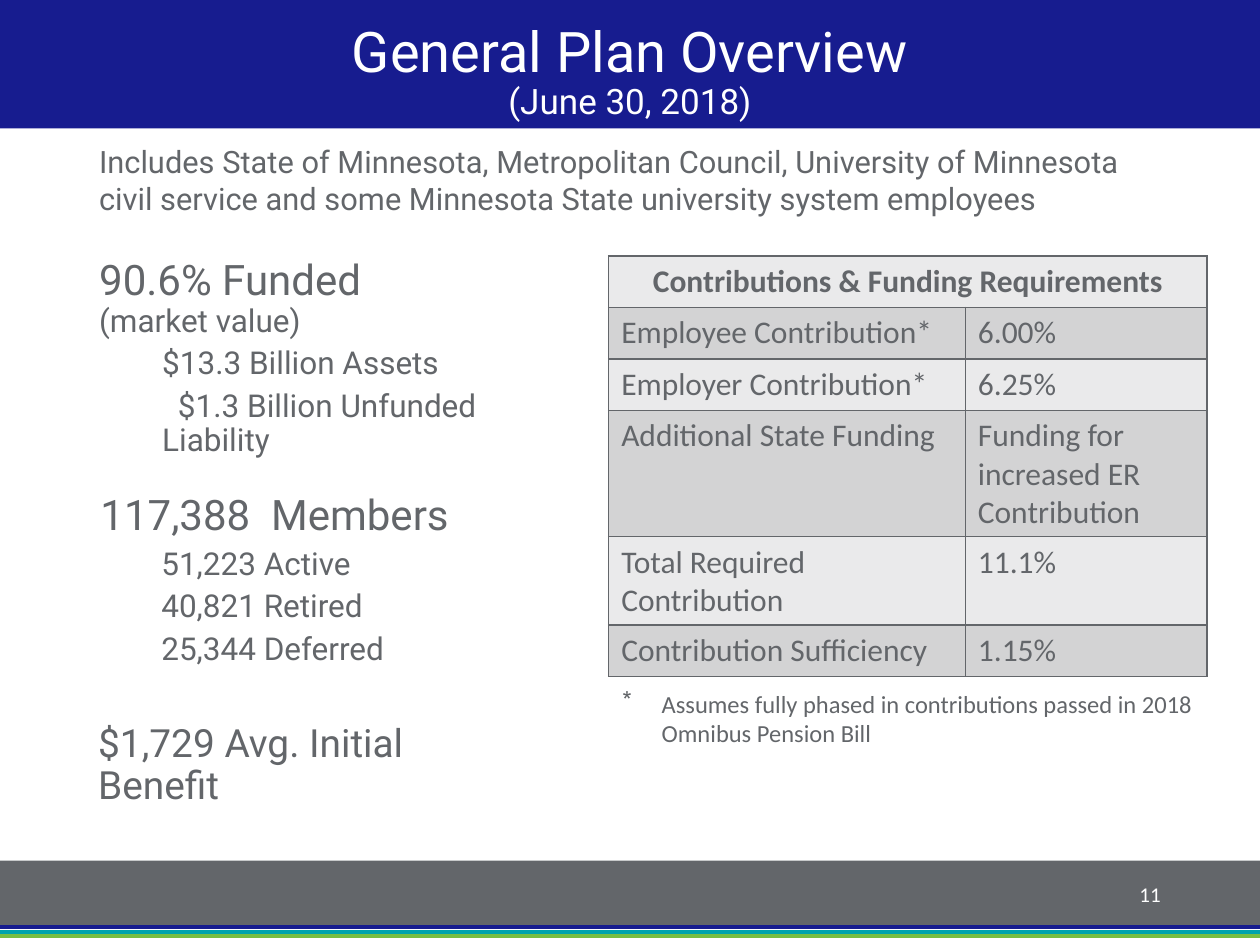
from copy import deepcopy

from lxml.etree import SubElement
from pptx import Presentation
from pptx.dml.color import RGBColor
from pptx.enum.shapes import MSO_CONNECTOR, MSO_SHAPE
from pptx.enum.text import MSO_ANCHOR, MSO_AUTO_SIZE, PP_ALIGN
from pptx.oxml.ns import qn
from pptx.util import Pt

NAVY = RGBColor(0x17, 0x1C, 0x8F)
TEAL = RGBColor(0x00, 0xA3, 0xAD)
GREEN = RGBColor(0x78, 0xBE, 0x43)
GRAY = RGBColor(0x63, 0x66, 0x6A)
LIGHT = RGBColor(0xEA, 0xEA, 0xEB)
MID = RGBColor(0xD3, 0xD3, 0xD4)
WHITE = RGBColor(0xFF, 0xFF, 0xFF)

HEADING = {"size": Pt(24), "name": "Roboto"}
DETAIL = {"size": Pt(18), "name": "Roboto"}
CELL = {"size": Pt(18), "name": "Calibri", "bold": False}


def set_font(font, formats, color=GRAY):
    for attribute, value in formats.items():
        setattr(font, attribute, value)
    font.color.rgb = color


def place(shape, box):
    for attribute, value in zip(("left", "top", "width", "height"), box):
        setattr(shape, attribute, Pt(value))


def set_indent(paragraph, margin, first=0, bullet=None):
    properties = paragraph._p.get_or_add_pPr()
    properties.set("marL", str(Pt(margin)))
    properties.set("indent", str(Pt(first)))
    if bullet:
        SubElement(properties, qn("a:buChar")).set("char", bullet)
    else:
        SubElement(properties, qn("a:buNone"))


def add_bar(slide, box, color):
    bar = slide.shapes.add_shape(MSO_SHAPE.RECTANGLE, *map(Pt, box))
    bar.shadow.inherit = False
    bar.fill.solid()
    bar.fill.fore_color.rgb = color
    bar.line.fill.background()


def add_text(slide, box, text, formats, color=GRAY, anchor=MSO_ANCHOR.TOP):
    label = slide.shapes.add_textbox(*map(Pt, box))
    frame = label.text_frame
    frame.word_wrap = True
    frame.vertical_anchor = anchor
    paragraph = frame.paragraphs[0]
    run = paragraph.add_run()
    run.text = text
    set_font(run.font, formats, color)
    return paragraph


def build_title(title, box):
    place(title, box)
    title.fill.solid()
    title.fill.fore_color.rgb = NAVY
    frame = title.text_frame
    frame.auto_size = MSO_AUTO_SIZE.NONE
    frame.vertical_anchor = MSO_ANCHOR.BOTTOM
    heading = frame.paragraphs[0]
    heading.alignment = PP_ALIGN.CENTER
    heading.line_spacing = 0.9
    name = heading.add_run()
    name.text = "General Plan Overview"
    set_font(name.font, {"size": Pt(32), "name": "Roboto"}, WHITE)
    # The line break takes the size of the heading
    heading.add_line_break()
    heading._p.find(qn("a:br")).append(deepcopy(name._r.rPr))
    date = heading.add_run()
    date.text = "(June 30, 2018)"
    set_font(date.font, {"size": Pt(20), "name": "Roboto"}, WHITE)


def build_list(body, box, entries):
    """Each entry is text, formats, left margin, first-line indent, space before."""
    place(body, box)
    frame = body.text_frame
    frame.auto_size = MSO_AUTO_SIZE.NONE
    for index, (text, formats, margin, first, before) in enumerate(entries):
        item = frame.paragraphs[0] if index == 0 else frame.add_paragraph()
        item.level = 1 if margin else 0
        item.line_spacing = 0.9
        item.space_before = Pt(before)
        set_indent(item, margin, first)
        run = item.add_run()
        run.text = text
        set_font(run.font, formats)
    return frame


def set_borders(cell):
    properties = cell._tc.get_or_add_tcPr()
    for index, side in enumerate(("a:lnL", "a:lnR", "a:lnT", "a:lnB")):
        border = properties.makeelement(qn(side), {"w": str(Pt(1))})
        fill = SubElement(border, qn("a:solidFill"))
        SubElement(fill, qn("a:srgbClr")).set("val", str(GRAY))
        properties.insert(index, border)


def build_contributions(slide, box):
    left, top, width, _ = box
    rows = [
        ("Contributions & Funding Requirements", ""),
        ("Employee Contribution*", "6.00%"),
        ("Employer Contribution*", "6.25%"),
        ("Additional State Funding", "Funding for increased ER Contribution"),
        ("Total Required Contribution", "11.1%"),
        ("Contribution Sufficiency", "1.15%"),
    ]
    table = slide.shapes.add_table(len(rows), 2, *map(Pt, box)).table
    table.columns[0].width = Pt(203.8)
    table.columns[1].width = Pt(width - 203.8)
    table.cell(0, 0).merge(table.cell(0, 1))
    for row, texts in enumerate(rows):
        for column, text in enumerate(texts):
            cell = table.cell(row, column)
            cell.fill.solid()
            cell.fill.fore_color.rgb = MID if row % 2 else LIGHT
            set_borders(cell)
            if text:
                cell.text = text
                paragraph = cell.text_frame.paragraphs[0]
                set_font(paragraph.runs[0].font, CELL | {"bold": row == 0})
                if row == 0:
                    paragraph.alignment = PP_ALIGN.CENTER
    # Footnote to the contribution rates
    note = add_text(slide, (left + 0.7, top + 244, width, 41),
                    "Assumes fully phased in contributions passed in 2018 Omnibus Pension Bill",
                    {"size": Pt(14), "name": "Calibri"})
    set_indent(note, 22.5, -22.5, "*")


def build_footer(slide, box):
    left, top, width, height = box
    add_bar(slide, box, GRAY)
    add_bar(slide, (left, top + 38, width, height - 38), WHITE)
    # Stripes
    for offset, color in ((38, NAVY), (41, TEAL), (43.2, GREEN)):
        y = Pt(top + offset)
        stripe = slide.shapes.add_connector(
            MSO_CONNECTOR.STRAIGHT, Pt(left), y, Pt(left + width), y)
        stripe.line.color.rgb = color
        stripe.line.width = Pt(2.5)
        SubElement(stripe._element.spPr, qn("a:effectLst"))
    # Page number
    number = add_text(slide, (left + 508.3, top + 5, 162, 28.8), "11",
                      {"size": Pt(12), "name": "Calibri"}, WHITE, MSO_ANCHOR.MIDDLE)
    number.alignment = PP_ALIGN.RIGHT


def main():
    deck = Presentation()
    deck.slide_width, deck.slide_height = Pt(720), Pt(540)
    slide = deck.slides.add_slide(deck.slide_layouts[3])
    title, funding, members = slide.placeholders

    build_footer(slide, (0, 491.8, 720, 48.2))
    build_title(title, (0, 0, 720, 73.4))
    add_text(slide, (49.5, 76.3, 621.5, 51),
             "Includes State of Minnesota, Metropolitan Council, University of Minnesota "
             "civil service and some Minnesota State university system employees",
             {"size": Pt(17.6), "name": "Roboto"}, anchor=MSO_ANCHOR.BOTTOM)

    build_list(funding, (49.5, 144.7, 250.5, 137.5), [
        ("90.6% Funded", HEADING, 0, 0, 0),
        ("(market value)", DETAIL, 0, 0, 0),
        ("$13.3 Billion Assets", DETAIL, 36, 0, 5),
        ("$1.3 Billion Unfunded Liability", DETAIL, 36, 9, 5),
    ])
    counts = ("51,223 Active", "40,821 Retired", "25,344 Deferred")
    member_list = build_list(members, (49, 278.6, 214.6, 131.8), [
        ("117,388  Members", HEADING, 0, 0, 0),
        *((count, DETAIL, 36, 0, 5) for count in counts),
    ])
    member_list.paragraphs[0].alignment = PP_ALIGN.RIGHT

    benefit = add_text(slide, (49, 410.4, 258, 36), "$1,729 Avg. Initial Benefit",
                       {"size": Pt(22.2), "name": "Roboto"})
    benefit.line_spacing = 0.9
    build_contributions(slide, (347.8, 146.2, 342, 177))
    deck.save("out.pptx")


if __name__ == "__main__":
    main()
